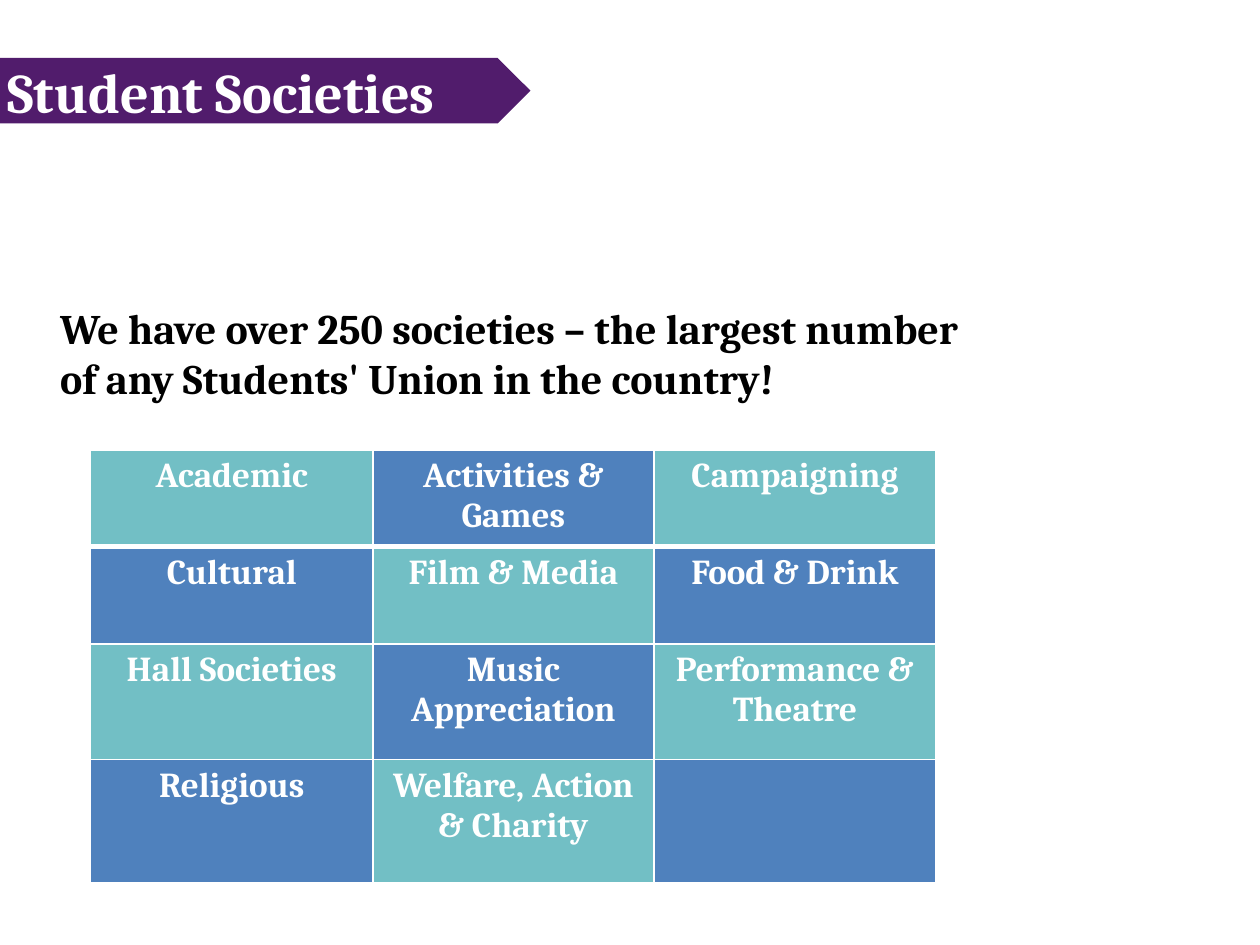
from lxml import etree
from pptx import Presentation
from pptx.dml.color import RGBColor
from pptx.enum import shapes, text
from pptx.oxml import ns
from pptx.util import Inches, Pt

WHITE, BLACK, PURPLE = "FFFFFF", "000000", "511C6C"
TEAL, BLUE = "72BFC5", "4F81BD"
SOCIETIES = [
    ["Academic", "Activities & Games", "Campaigning"],
    ["Cultural", "Film & Media", "Food & Drink"],
    ["Hall Societies", "Music Appreciation", "Performance & Theatre"],
    ["Religious", "Welfare, Action & Charity", ""],
]


def rgb(value):
    return RGBColor.from_string(value)


def set_border(cell, side, width):
    """Draw one white cell edge; side is L, R, T or B."""
    ln = etree.Element(ns.qn(f"a:ln{side}"), w=str(Pt(width)))
    fill = etree.SubElement(ln, ns.qn("a:solidFill"))
    etree.SubElement(fill, ns.qn("a:srgbClr"), val=WHITE)
    cell._tc.get_or_add_tcPr().append(ln)


class SlideBuilder:
    font = "Cambria"

    def __init__(self, slide):
        self.slide = slide

    def set_text(self, tf, content, size, color, align=text.PP_ALIGN.LEFT):
        tf.word_wrap = True
        tf.text = content
        p = tf.paragraphs[0]
        p.alignment = align
        for r in p.runs:
            r.font.name = self.font
            r.font.size = Pt(size)
            r.font.bold = True
            r.font.color.rgb = rgb(color)

    def banner(self, content, left, top, width, height):
        sp = self.slide.shapes.add_shape(
            shapes.MSO_SHAPE.PENTAGON, Inches(left), Inches(top), Inches(width), Inches(height))
        sp.shadow.inherit = False
        sp.fill.solid()
        sp.fill.fore_color.rgb = rgb(PURPLE)
        sp.line.fill.background()
        sp.text_frame.vertical_anchor = text.MSO_ANCHOR.MIDDLE
        self.set_text(sp.text_frame, content, 32, WHITE)

    def statement(self, content, left, top, width, height):
        sp = self.slide.shapes.add_textbox(
            Inches(left), Inches(top), Inches(width), Inches(height))
        self.set_text(sp.text_frame, content, 24, BLACK)

    def checkerboard(self, rows, left, top, col_widths, row_heights):
        """Add a table whose cells alternate between teal and blue."""
        table = self.slide.shapes.add_table(
            len(rows), len(col_widths), Inches(left), Inches(top),
            Inches(sum(col_widths)), Inches(sum(row_heights))).table
        for col, width in zip(table.columns, col_widths):
            col.width = Inches(width)
        for i, (row, height) in enumerate(zip(rows, row_heights)):
            table.rows[i].height = Inches(height)
            for j, content in enumerate(row):
                cell = table.cell(i, j)
                self.set_text(cell.text_frame, content, 20, WHITE, text.PP_ALIGN.CENTER)
                widths = {"L": 1, "R": 1, "T": 3 if i == 1 else 1, "B": 3 if i == 0 else 1}
                for side, weight in widths.items():
                    set_border(cell, side, weight)
                cell.fill.solid()
                cell.fill.fore_color.rgb = rgb(BLUE if (i + j) % 2 else TEAL)


def main():
    prs = Presentation()
    prs.slide_width, prs.slide_height = Inches(10), Inches(7.5)
    s = SlideBuilder(prs.slides.add_slide(prs.slide_layouts[6]))
    s.statement("We have over 250 societies – the largest number of any "
                "Students' Union in the country!", 0.38, 2.35, 7.37, 1.72)
    s.checkerboard(SOCIETIES, 0.72, 3.57, [2.24, 2.23, 2.24], [0.77, 0.77, 0.92, 0.98])
    s.banner("Student Societies", -0.04, 0.46, 4.25, 0.52)
    prs.save("out.pptx")


if __name__ == "__main__":
    main()
